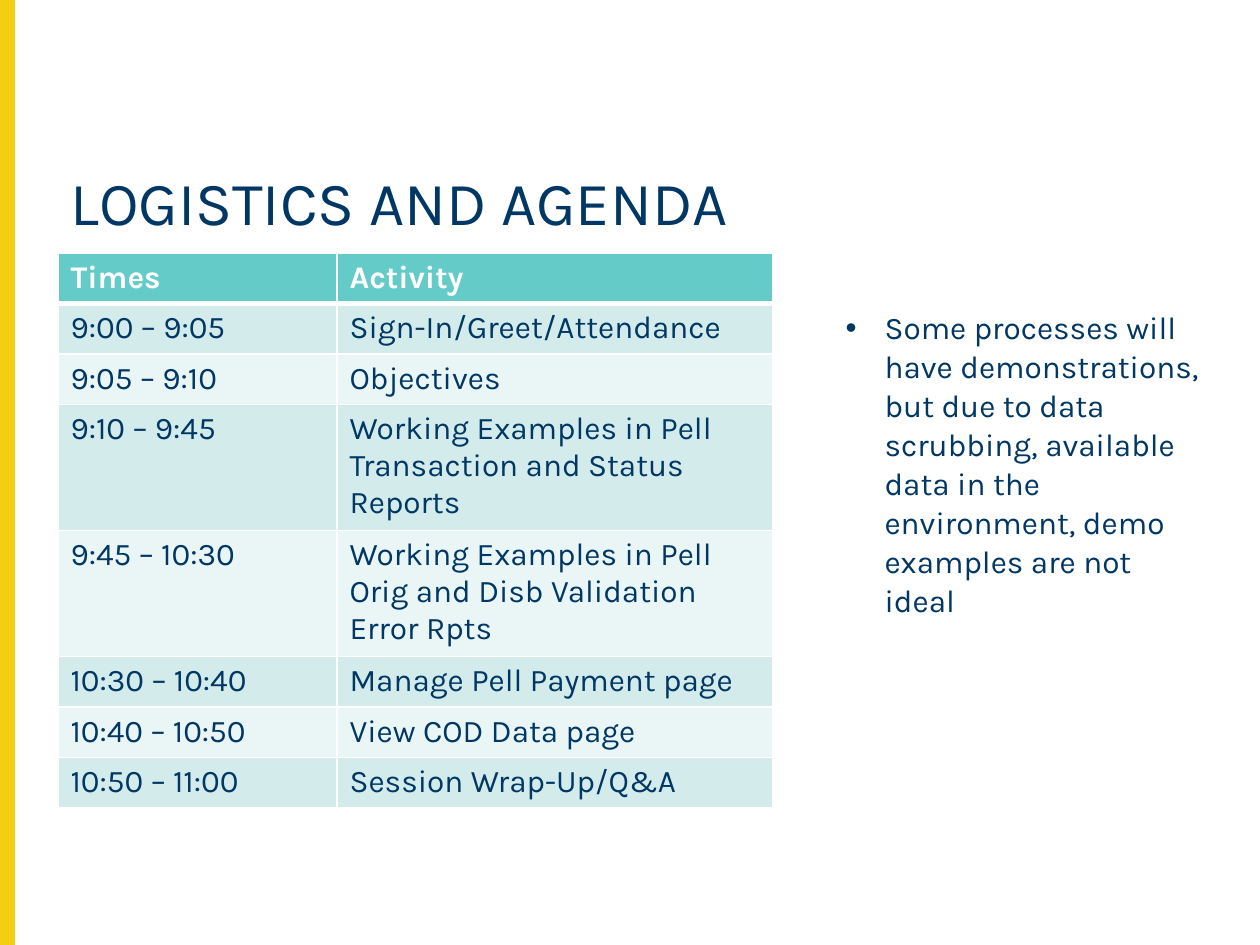
from lxml.etree import SubElement
from pptx import Presentation
from pptx.dml.color import RGBColor
from pptx.enum.shapes import MSO_SHAPE as Shape
from pptx.enum.text import MSO_ANCHOR as Anchor, MSO_AUTO_SIZE as AutoSize, PP_ALIGN as Align
from pptx.oxml.ns import qn
from pptx.util import Emu, Pt

EMU_PER_PX = 914400 / 126

NAVY = RGBColor(0x00, 0x37, 0x64)
YELLOW = RGBColor(0xF4, 0xCE, 0x12)
TEAL = RGBColor(0x65, 0xCB, 0xC9)
BAND_DARK = RGBColor(0xD3, 0xEC, 0xEB)
BAND_LIGHT = RGBColor(0xEA, 0xF6, 0xF5)
WHITE = RGBColor(0xFF, 0xFF, 0xFF)

AGENDA = [
    ("Times", "Activity"),
    ("9:00 – 9:05", "Sign-In/Greet/Attendance"),
    ("9:05 – 9:10", "Objectives"),
    ("9:10 – 9:45", "Working Examples in Pell Transaction and Status Reports"),
    ("9:45 – 10:30", "Working Examples in Pell Orig and Disb Validation Error Rpts"),
    ("10:30 – 10:40", "Manage Pell Payment page"),
    ("10:40 – 10:50", "View COD Data page"),
    ("10:50 – 11:00", "Session Wrap-Up/Q&A"),
]
COLUMN_WIDTHS = (279, 436)
ROW_HEIGHT = 47
NOTE = ("Some processes will have demonstrations, but due to data scrubbing, "
        "available data in the environment, demo examples are not ideal")


def px(length):
    return Emu(round(length * EMU_PER_PX))


def set_all(target, formats):
    """Set each named attribute of the target."""
    for name, value in formats.items():
        setattr(target, name, value)


def place(shape, left, top, width, height):
    set_all(shape, {"left": px(left), "top": px(top), "width": px(width), "height": px(height)})


def write(frame, text, size, color=NAVY, bold=False, **paragraph_formats):
    """Put one formatted paragraph in a text frame and return it."""
    para = frame.paragraphs[0]
    set_all(para, paragraph_formats)
    span = para.add_run()
    span.text = text
    set_all(span.font, {"name": "Karla", "size": Pt(size), "bold": bold})
    span.font.color.rgb = color
    return para


def add_side_bar(page, deck):
    bar = page.shapes.add_shape(Shape.RECTANGLE, 0, 0, px(14), deck.slide_height)
    bar.shadow.inherit = False
    bar.fill.solid()
    bar.fill.fore_color.rgb = YELLOW
    bar.line.color.rgb = YELLOW
    bar.line.width = Pt(1)


def fill_title(title):
    place(title, 58, 164, 1176, 99)
    set_all(title.text_frame, {"vertical_anchor": Anchor.TOP, "auto_size": AutoSize.NONE,
                               "margin_top": px(9)})
    write(title.text_frame, "LOGISTICS AND AGENDA", 35, alignment=Align.LEFT, line_spacing=0.9)


def fill_note(body):
    place(body, 833, 301, 383, 280)
    set_all(body.text_frame, {"vertical_anchor": Anchor.TOP,
                              "auto_size": AutoSize.SHAPE_TO_FIT_TEXT})
    para = write(body.text_frame, NOTE, 18, space_before=Pt(0), line_spacing=1.03)
    properties = para._p.get_or_add_pPr()
    properties.set("marL", str(px(39)))
    properties.set("indent", str(px(-39)))
    SubElement(properties, qn("a:buFont"), typeface="Arial")
    SubElement(properties, qn("a:buChar"), char="•")


def add_borders(cell, widths):
    """Draw white cell borders; widths maps each side to points."""
    properties = cell._tc.get_or_add_tcPr()
    for position, (side, width) in enumerate(widths.items()):
        line = properties.makeelement(qn(f"a:ln{side}"), {"w": str(Pt(width))})
        SubElement(SubElement(line, qn("a:solidFill")), qn("a:srgbClr"), val=str(WHITE))
        properties.insert(position, line)


def fill_cell(cell, text, row):
    is_header = row == 0
    write(cell.text_frame, text, 18, WHITE if is_header else NAVY, is_header)
    cell.fill.solid()
    cell.fill.fore_color.rgb = TEAL if is_header else BAND_DARK if row % 2 else BAND_LIGHT
    add_borders(cell, {"L": 1, "R": 1, "T": 3 if row == 1 else 1, "B": 3 if is_header else 1})


def add_agenda(page):
    table = page.shapes.add_table(
        len(AGENDA), len(COLUMN_WIDTHS), px(58), px(253),
        px(sum(COLUMN_WIDTHS)), px(ROW_HEIGHT * len(AGENDA))).table
    for column, width in zip(table.columns, COLUMN_WIDTHS):
        column.width = px(width)
    for row, texts in enumerate(AGENDA):
        table.rows[row].height = px(ROW_HEIGHT)
        for column, text in enumerate(texts):
            fill_cell(table.cell(row, column), text, row)


def main():
    deck = Presentation()
    set_all(deck, {"slide_width": px(1260), "slide_height": px(945)})
    page = deck.slides.add_slide(deck.slide_layouts[1])
    add_side_bar(page, deck)
    fill_title(page.shapes.title)
    add_agenda(page)
    fill_note(page.placeholders[1])
    deck.save("out.pptx")


if __name__ == "__main__":
    main()
